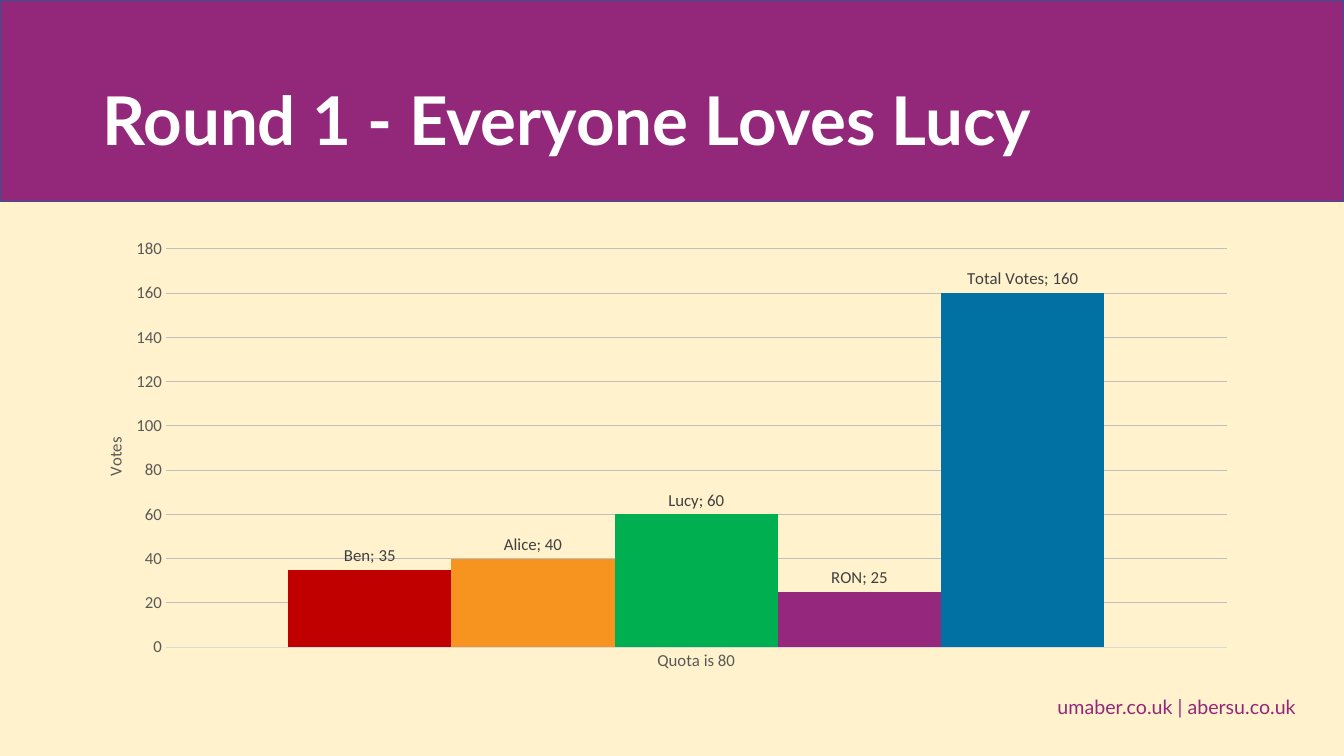
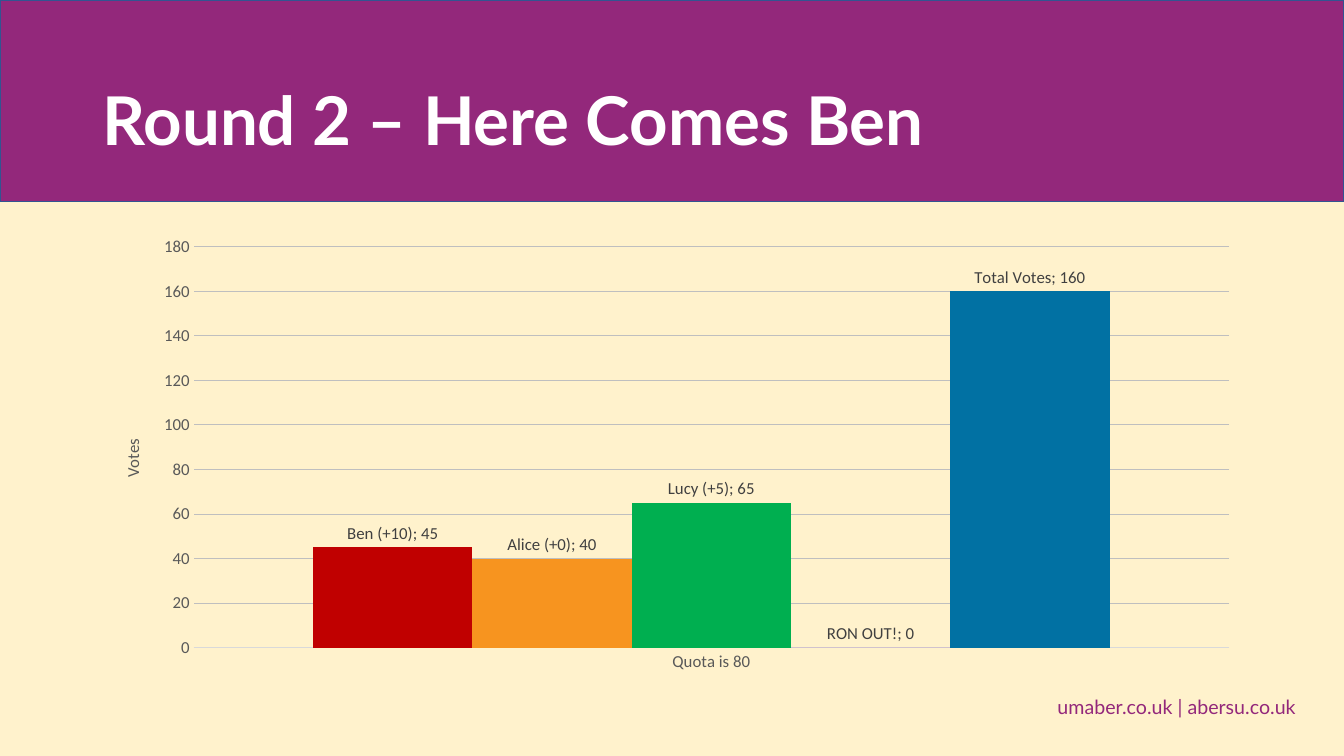
"""Build two slides that chart the votes in each counting round."""
from dataclasses import dataclass

from lxml import etree
from pptx import Presentation
from pptx.chart.data import CategoryChartData
from pptx.dml.color import RGBColor
from pptx.enum.chart import XL_CHART_TYPE, XL_LABEL_POSITION, XL_TICK_MARK
from pptx.enum.shapes import MSO_SHAPE
from pptx.enum.text import MSO_ANCHOR
from pptx.oxml.ns import qn
from pptx.util import Inches, Pt

COLUMNS = XL_CHART_TYPE.COLUMN_CLUSTERED
OUTSIDE_END = XL_LABEL_POSITION.OUTSIDE_END
NO_TICK = XL_TICK_MARK.NONE
RECTANGLE = MSO_SHAPE.RECTANGLE
TOP, MIDDLE = MSO_ANCHOR.TOP, MSO_ANCHOR.MIDDLE


@dataclass(frozen=True)
class Theme:
    """Colours, fonts and type sizes of the slides."""
    background: str = "FFF2CC"
    accent: str = "93287B"
    band_line: str = "325491"
    title: str = "FFFFFF"
    axis_text: str = "595959"
    label_text: str = "404040"
    axis_line: str = "D9D9D9"
    grid: str = "BFBFBF"
    bars: tuple = ("C00000", "F7941F", "00AF50", "95277D", "0171A3")
    text_font: str = "Lato"
    chart_font: str = "Calibri"
    title_size: int = 48
    footer_size: int = 14
    chart_size: int = 12


THEME = Theme()
SLIDE_WIDTH, SLIDE_HEIGHT, BAND_HEIGHT = 13.33, 7.5, 2
CHART_LEFT, CHART_WIDTH, CHART_BOTTOM = 0.92, 11.5, 6.75
FOOTER = "umaber.co.uk | abersu.co.uk"
CATEGORY = "Quota is 80"
VALUE_TITLE = "Votes"
ROUNDS = [
    {
        "title": "Round 1 - Everyone Loves Lucy",
        "votes": [("Ben", 35), ("Alice", 40), ("Lucy", 60), ("RON", 25), ("Total Votes", 160)],
        "chart_top": 2.23,
        "plot": {"x": 0.063, "y": 0.053, "w": 0.915, "h": 0.874},
        "value_title": {"x": 0.007, "y": 0.46},
    },
    {
        "title": "Round 2 – Here Comes Ben",
        "votes": [("Ben (+10)", 45), ("Alice (+0)", 40), ("Lucy (+5)", 65), ("RON OUT!", 0),
                  ("Total Votes", 160)],
        "chart_top": 2.26,
        "plot": {"x": 0.087, "y": 0.042, "w": 0.893, "h": 0.886},
        "value_title": {"x": 0.022, "y": 0.46},
    },
]


def color(value):
    return RGBColor.from_string(value)


def style_font(font, name, size, fill, bold=False):
    font.name, font.size, font.bold = name, Pt(size), bold
    font.color.rgb = color(fill)


def add_text(slide, text, box, size, fill, bold=False, anchor=TOP, spacing=1.0):
    frame = slide.shapes.add_textbox(*map(Inches, box)).text_frame
    frame.word_wrap = True
    frame.vertical_anchor = anchor
    paragraph = frame.paragraphs[0]
    paragraph.line_spacing = spacing
    run = paragraph.add_run()
    run.text = text
    style_font(run.font, THEME.text_font, size, fill, bold)


def add_band(slide):
    band = slide.shapes.add_shape(RECTANGLE, 0, 0, Inches(SLIDE_WIDTH), Inches(BAND_HEIGHT))
    band.shadow.inherit = False
    band.fill.solid()
    band.fill.fore_color.rgb = color(THEME.accent)
    band.line.color.rgb = color(THEME.band_line)
    band.line.width = Pt(1)


def set_layout(parent, index, fractions, inner=False):
    for old in parent.findall(qn("c:layout")):
        parent.remove(old)
    layout = etree.Element(qn("c:layout"))
    manual = etree.SubElement(layout, qn("c:manualLayout"))
    settings = [("layoutTarget", "inner")] if inner else []
    settings += [(f"{key}Mode", "edge") for key in ("x", "y")]
    settings += fractions.items()
    for tag, value in settings:
        etree.SubElement(manual, qn(f"c:{tag}")).set("val", str(value))
    parent.insert(index, layout)


def style_axes(chart, title_place):
    category_axis, value_axis = chart.category_axis, chart.value_axis
    for axis in (category_axis, value_axis):
        axis.major_tick_mark = axis.minor_tick_mark = NO_TICK
        style_font(axis.tick_labels.font, THEME.chart_font, THEME.chart_size, THEME.axis_text)
    category_axis.format.line.color.rgb = color(THEME.axis_line)
    category_axis.format.line.width = Pt(0.75)
    value_axis.format.line.fill.background()
    value_axis.minimum_scale, value_axis.maximum_scale, value_axis.major_unit = 0, 180, 20
    grid_line = value_axis.major_gridlines.format.line
    grid_line.color.rgb = color(THEME.grid)
    grid_line.width = Pt(0.75)
    title = value_axis.axis_title
    frame = title.text_frame
    frame.text = VALUE_TITLE
    style_font(frame.paragraphs[0].runs[0].font, THEME.chart_font, THEME.chart_size,
               THEME.axis_text)
    body = title._element.find(".//" + qn("a:bodyPr"))
    body.set("rot", "-5400000")
    body.set("vert", "horz")
    set_layout(title._element, 1, title_place)


def style_series(series, fill):
    series.format.fill.solid()
    series.format.fill.fore_color.rgb = color(fill)
    labels = series.data_labels
    labels.show_value = labels.show_series_name = True
    labels.position = OUTSIDE_END
    style_font(labels.font, THEME.chart_font, THEME.chart_size, THEME.label_text)
    separator = etree.Element(qn("c:separator"))
    separator.text = "; "
    labels._element.find(qn("c:showBubbleSize")).addnext(separator)


def add_vote_chart(slide, content):
    data = CategoryChartData()
    data.categories = [CATEGORY]
    for name, votes in content["votes"]:
        data.add_series(name, [votes])
    top = content["chart_top"]
    box = (CHART_LEFT, top, CHART_WIDTH, CHART_BOTTOM - top)
    chart = slide.shapes.add_chart(COLUMNS, *map(Inches, box), data).chart
    chart.has_legend = chart.has_title = False
    style_font(chart.font, THEME.chart_font, THEME.chart_size, THEME.axis_text)
    plot = chart.plots[0]
    plot.vary_by_categories = False
    plot.gap_width, plot.overlap = 150, 0
    for series, fill in zip(plot.series, THEME.bars):
        style_series(series, fill)
    style_axes(chart, content["value_title"])
    set_layout(chart._chartSpace.find(".//" + qn("c:plotArea")), 0, content["plot"], inner=True)


def add_round(presentation, content):
    slide = presentation.slides.add_slide(presentation.slide_layouts[6])
    slide.background.fill.solid()
    slide.background.fill.fore_color.rgb = color(THEME.background)
    add_band(slide)
    add_text(slide, content["title"], (CHART_LEFT, 0.61, CHART_WIDTH, 1.24), THEME.title_size,
             THEME.title, bold=True, anchor=MIDDLE, spacing=0.9)
    add_vote_chart(slide, content)
    add_text(slide, FOOTER, (10.39, 6.84, 2.8, 0.34), THEME.footer_size, THEME.accent)


def main():
    presentation = Presentation()
    presentation.slide_width = Inches(SLIDE_WIDTH)
    presentation.slide_height = Inches(SLIDE_HEIGHT)
    for content in ROUNDS:
        add_round(presentation, content)
    presentation.save("out.pptx")


if __name__ == "__main__":
    main()
